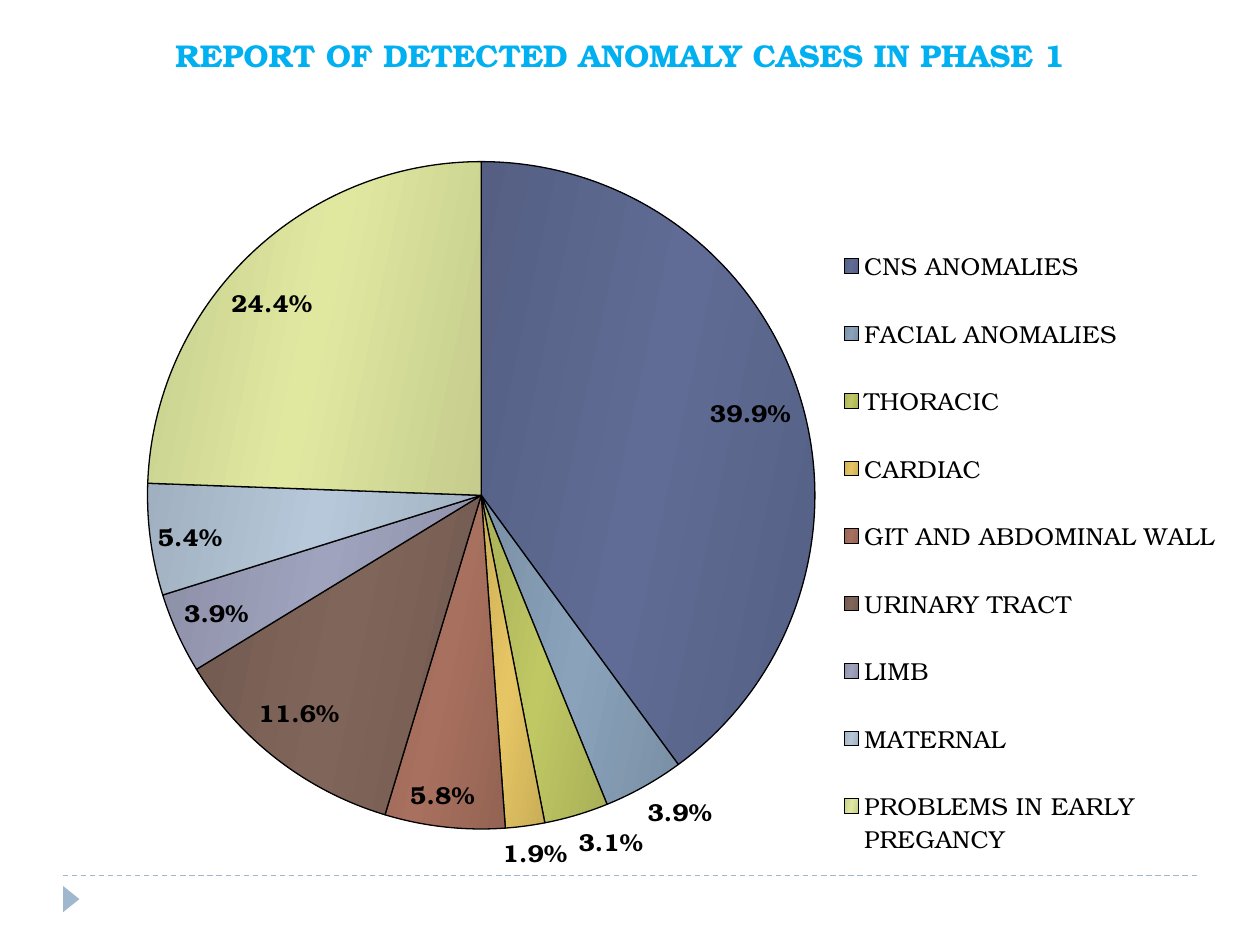
from copy import deepcopy
from dataclasses import dataclass

from lxml import etree
from pptx import Presentation
from pptx import util as u
from pptx.chart.data import CategoryChartData
from pptx.dml.color import RGBColor
from pptx.enum import chart as ch, dml, shapes, text
from pptx.oxml.ns import qn


@dataclass(frozen=True)
class Theme:
    font: str = "TeX Gyre Bonum"
    title: str = "00B0F0"
    ink: str = "000000"
    accent: str = "9FB8CD"
    title_size: int = 18
    chart_size: int = 14
    line: float = 0.75
    edge_shade: float = 0.88
    angle: int = 348


@dataclass(frozen=True)
class Slice:
    name: str
    value: float
    color: str
    outside: bool = False
    dx: float = 0
    dy: float = 0


THEME = Theme()
EDGE_MODES = {"xMode": "edge", "yMode": "edge"}
SLICES = [
    Slice("CNS ANOMALIES", 0.399, "606C95"),
    Slice("FACIAL ANOMALIES", 0.039, "8AA3BB", True),
    Slice("THORACIC", 0.031, "C0C864", True),
    Slice("CARDIAC", 0.019, "E6C664", True, dx=-0.02),
    Slice("GIT AND ABDOMINAL WALL", 0.058, "A8705E", dx=-0.03, dy=-0.01),
    Slice("URINARY TRACT", 0.116, "80655A", dx=-0.02, dy=-0.03),
    Slice("LIMB", 0.039, "9FA3BD"),
    Slice("MATERNAL", 0.054, "B6C8DA", dy=0.02),
    Slice("PROBLEMS IN EARLY PREGANCY", 0.244, "E0E8A0", dx=-0.02, dy=0.03),
]


def rgb(color: str) -> RGBColor:
    return RGBColor.from_string(color)


def shade(color: str, factor: float) -> RGBColor:
    return RGBColor(*(round(c * factor) for c in rgb(color)))


def set_font(font, size: int, color: str, bold: bool) -> None:
    font.name = THEME.font
    font.size = u.Pt(size)
    font.bold = bold
    font.color.rgb = rgb(color)


def set_layout(parent, after: str, **settings: str | float) -> None:
    for old in parent.findall(qn("c:layout")):
        parent.remove(old)
    layout = etree.Element(qn("c:layout"))
    manual = etree.SubElement(layout, qn("c:manualLayout"))
    for key, value in settings.items():
        etree.SubElement(manual, qn("c:" + key), val=str(value))
    if after:
        parent.find(qn(after)).addnext(layout)
    else:
        parent.insert(0, layout)


def add_footer(s) -> None:
    cx = s.shapes.add_connector(shapes.MSO_CONNECTOR.STRAIGHT,
                                u.Cm(1.27), u.Cm(17.65), u.Cm(24.13), u.Cm(17.65))
    cx.line.color.rgb = rgb(THEME.accent)
    cx.line.width = u.Pt(THEME.line)
    cx.line.dash_style = dml.MSO_LINE.DASH
    etree.SubElement(cx._element.spPr, qn("a:effectLst"))
    sp = s.shapes.add_shape(shapes.MSO_SHAPE.ISOSCELES_TRIANGLE,
                            u.Cm(1.17), u.Cm(17.96), u.Cm(0.53), u.Cm(0.33))
    sp.rotation = 90
    sp.shadow.inherit = False
    sp.fill.solid()
    sp.fill.fore_color.rgb = rgb(THEME.accent)
    sp.line.fill.background()


def add_title(s, title: str) -> None:
    tf = s.shapes.add_textbox(0, u.Cm(0.6), u.Cm(25), u.Cm(1.02)).text_frame
    tf.word_wrap = True
    p = tf.paragraphs[0]
    p.text = title
    p.alignment = text.PP_ALIGN.CENTER
    set_font(p.font, THEME.title_size, THEME.title, True)


def style_slice(point, item: Slice) -> None:
    fill = point.format.fill
    fill.gradient()
    fill.gradient_angle = THEME.angle
    first = fill.gradient_stops[0]._gs
    first.getparent().append(deepcopy(first))
    stops = zip(fill.gradient_stops, (0, 0.5, 1), (THEME.edge_shade, 1, THEME.edge_shade))
    for stop, position, factor in stops:
        stop.position = position
        stop.color.rgb = shade(item.color, factor)
    point.format.line.color.rgb = rgb(THEME.ink)
    point.format.line.width = u.Pt(THEME.line)
    label = point.data_label
    set_font(label.font, THEME.chart_size, THEME.ink, True)
    position = ch.XL_LABEL_POSITION
    label.position = position.OUTSIDE_END if item.outside else position.INSIDE_END
    if item.dx or item.dy:
        set_layout(label._get_or_add_dLbl(), "c:idx", x=item.dx, y=item.dy)


def add_pie(s, slices: list[Slice]) -> None:
    data = CategoryChartData(number_format="0.0%")
    data.categories = [item.name for item in slices]
    data.add_series("Series 1", [item.value for item in slices])
    chart = s.shapes.add_chart(ch.XL_CHART_TYPE.PIE, u.Cm(1.08), u.Cm(2.8),
                               u.Cm(23.62), u.Cm(15.29), data).chart
    chart.has_title = False
    set_font(chart.font, THEME.chart_size, THEME.ink, False)
    chart.has_legend = True
    chart.legend.position = ch.XL_LEGEND_POSITION.RIGHT
    chart.legend.include_in_layout = False
    set_font(chart.legend.font, THEME.chart_size, THEME.ink, False)

    plot = chart.plots[0]
    plot.vary_by_categories = True
    plot.has_data_labels = True
    labels = plot.data_labels
    labels.show_value = True
    labels.show_percentage = False
    labels.number_format = "0.0%"
    labels.number_format_is_linked = False
    set_font(labels.font, THEME.chart_size, THEME.ink, True)
    for i, item in enumerate(slices):
        style_slice(plot.series[0].points[i], item)

    space = chart._chartSpace
    for leader in space.iter(qn("c:showLeaderLines")):
        leader.set("val", "0")
    set_layout(space.chart.plotArea, "", layoutTarget="inner", **EDGE_MODES,
               x=0.08, y=0.03, w=0.57, h=0.88)
    set_layout(chart.legend._element, "c:legendPos", **EDGE_MODES,
               x=0.67, y=0.1, w=0.33, h=0.89)


def main() -> None:
    prs = Presentation()
    prs.slide_width, prs.slide_height = u.Cm(25.4), u.Cm(19.05)
    s = prs.slides.add_slide(prs.slide_layouts[6])
    add_footer(s)
    add_title(s, "REPORT OF DETECTED ANOMALY CASES IN PHASE 1")
    add_pie(s, SLICES)
    prs.save("out.pptx")


if __name__ == "__main__":
    main()
